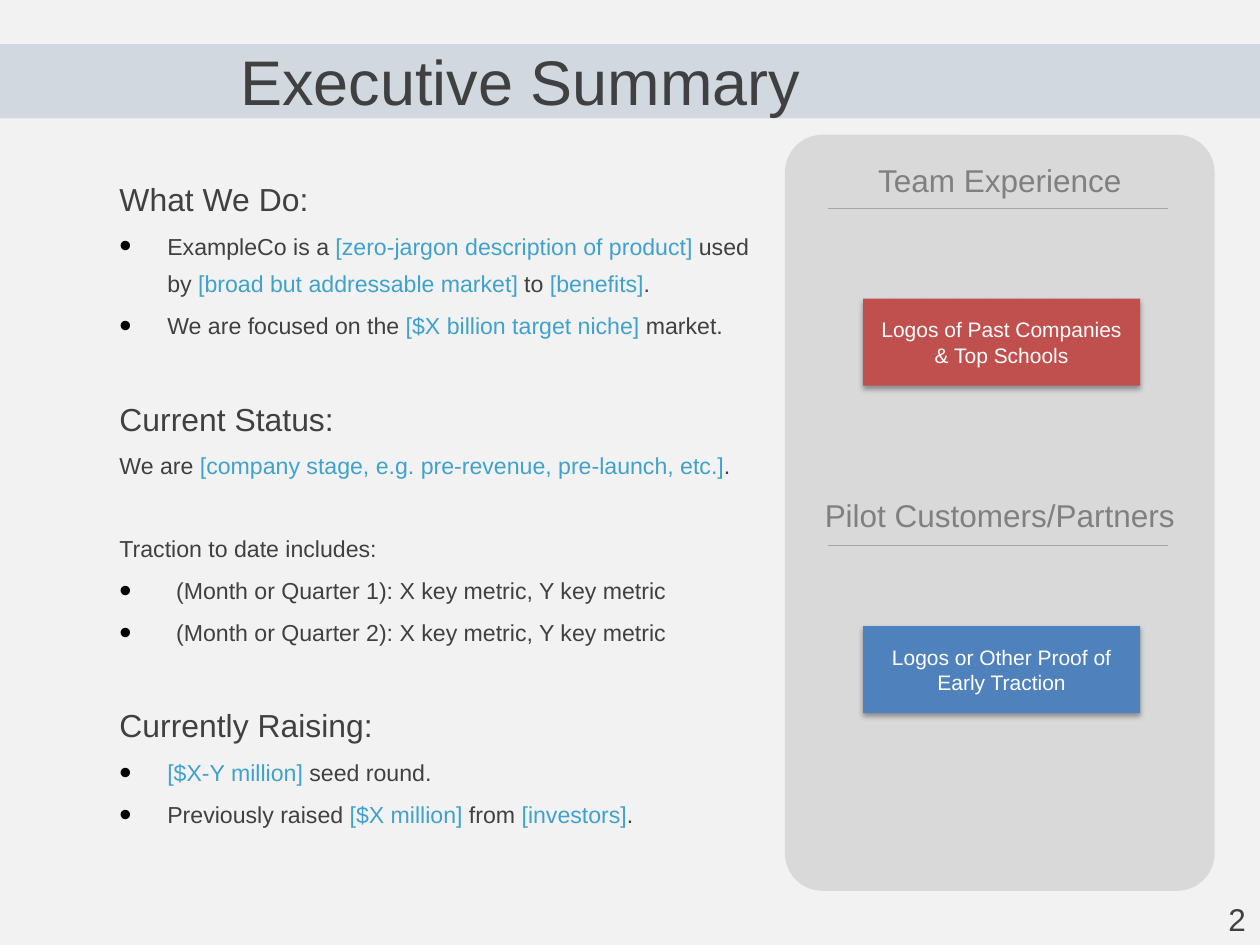
from lxml.etree import SubElement
from pptx import Presentation
from pptx.dml.color import RGBColor
from pptx.enum.shapes import MSO_CONNECTOR, MSO_SHAPE
from pptx.enum.text import MSO_ANCHOR as Anchor, PP_ALIGN as Align
from pptx.oxml.ns import qn
from pptx.util import Inches, Pt

BACKGROUND = RGBColor(0xF2, 0xF2, 0xF2)
NAVY = RGBColor(0x1F, 0x49, 0x7D)
DARK = RGBColor(0x40, 0x40, 0x40)
ACCENT = RGBColor(0x40, 0xA2, 0xCB)
PANEL = RGBColor(0xD9, 0xD9, 0xD9)
LABEL = RGBColor(0x80, 0x80, 0x80)
RULE = RGBColor(0xA6, 0xA6, 0xA6)
RED = RGBColor(0xC0, 0x50, 0x4D)
BLUE = RGBColor(0x4F, 0x81, 0xBD)
WHITE = RGBColor(0xFF, 0xFF, 0xFF)

HEADING, BODY = 18.2, 13.2
SECTION_GAP, PARAGRAPH_GAP = 26.7, 25.8

# text, size, space before, hanging indent; bracketed words are highlighted
SUMMARY = [
    ("What We Do:", HEADING, 0, 0),
    ("ExampleCo is a [zero-jargon description of product] used by "
     "[broad but addressable market] to [benefits].", BODY, 2.64, 0.38),
    ("We are focused on the [$X billion target niche] market.", BODY, 2.64, 0.38),
    ("Current Status:", HEADING, SECTION_GAP, 0),
    ("We are [company stage, e.g. pre-revenue, pre-launch, etc.].", BODY, 2.64, 0),
    ("Traction to date includes:", BODY, PARAGRAPH_GAP, 0),
    ("(Month or Quarter 1): X key metric, Y key metric", BODY, 2.64, 0.45),
    ("(Month or Quarter 2): X key metric, Y key metric", BODY, 2.64, 0.45),
    ("Currently Raising:", HEADING, SECTION_GAP, 0),
    ("[$X-Y million] seed round.", BODY, 2.64, 0.38),
    ("Previously raised [$X million] from [investors].", BODY, 2.64, 0.38),
]

# label, label top, rule height, proof text, proof top, proof colour
PANEL_SECTIONS = [
    ("Team Experience", 1.23, 1.65,
     "Logos of Past Companies & Top Schools", 2.37, RED),
    ("Pilot Customers/Partners", 3.89, 4.33,
     "Logos or Other Proof of Early Traction", 4.97, BLUE),
]


def set_font(para, size, color):
    para.font.name = "Arial"
    para.font.size = Pt(size)
    para.font.color.rgb = color


def add_block(shapes, kind, left, top, width, height, color):
    block = shapes.add_shape(kind, Inches(left), Inches(top), Inches(width), Inches(height))
    block.shadow.inherit = False
    block.fill.solid()
    block.fill.fore_color.rgb = color
    block.line.fill.background()
    return block


def add_text(shapes, left, top, width, height, text, size, color, align=Align.LEFT, wrap=False):
    box = shapes.add_textbox(Inches(left), Inches(top), Inches(width), Inches(height))
    box.text_frame.word_wrap = wrap
    para = box.text_frame.paragraphs[0]
    para.text = text
    para.alignment = align
    set_font(para, size, color)
    return box


def add_bullet(para, indent):
    props = para._p.get_or_add_pPr()
    props.set("marL", str(Inches(indent)))
    props.set("indent", str(-Inches(indent)))
    SubElement(SubElement(props, qn("a:buClr")), qn("a:srgbClr"), val="000000")
    SubElement(props, qn("a:buSzPct"), val="150000")
    SubElement(props, qn("a:buFont"), typeface="Arial")
    SubElement(props, qn("a:buChar"), char="•")


def add_shadow(shape):
    effects = shape._element.spPr.find(qn("a:effectLst"))
    shadow = SubElement(effects, qn("a:outerShdw"), blurRad=str(Pt(3.1)),
                        dist=str(Pt(1.8)), dir="5400000", rotWithShape="0")
    color = SubElement(shadow, qn("a:srgbClr"), val="000000")
    SubElement(color, qn("a:alpha"), val="35000")


def add_rule(shapes, left, right, top):
    rule = shapes.add_connector(MSO_CONNECTOR.STRAIGHT, Inches(left), Inches(top),
                                Inches(right), Inches(top))
    rule.line.color.rgb = RULE
    rule.line.width = Pt(0.25)
    SubElement(rule._element.spPr, qn("a:effectLst"))


def add_title_band(page, top, width, height):
    band = add_block(page.shapes, MSO_SHAPE.RECTANGLE, 0, top, width, height, NAVY)
    color = band._element.spPr.find(qn("a:solidFill"))[0]
    SubElement(color, qn("a:alpha"), val="15000")
    title = add_text(page.shapes, 1.81, top, 6.7, height, "Executive Summary", 36, DARK, wrap=True)
    title.text_frame.margin_top = Inches(0.1)
    title.text_frame.margin_bottom = 0
    title.text_frame.paragraphs[0].line_spacing = 0.8


def add_summary(page, left, top, width, height):
    box = page.shapes.add_textbox(Inches(left), Inches(top), Inches(width), Inches(height))
    frame = box.text_frame
    frame.word_wrap = True
    for index, (text, size, space, indent) in enumerate(SUMMARY):
        para = frame.add_paragraph() if index else frame.paragraphs[0]
        para.line_spacing = 1.35
        para.space_before = Pt(space)
        if indent:
            add_bullet(para, indent)
        set_font(para, size, DARK)
        for part in text.replace("[", "|[").replace("]", "]|").split("|"):
            if part:
                span = para.add_run()
                span.text = part
                if part.startswith("["):
                    span.font.color.rgb = ACCENT


def add_proof(shapes, left, top, width, height, text, color):
    proof = add_block(shapes, MSO_SHAPE.RECTANGLE, left, top, width, height, color)
    add_shadow(proof)
    frame = proof.text_frame
    frame.word_wrap = True
    frame.vertical_anchor = Anchor.MIDDLE
    para = frame.paragraphs[0]
    para.text = text
    para.alignment = Align.CENTER
    set_font(para, 12, WHITE)


def add_side_panel(page, left, top, width, height):
    shapes = page.shapes.add_group_shape().shapes
    panel = add_block(shapes, MSO_SHAPE.ROUNDED_RECTANGLE, left, top, width, height, PANEL)
    panel.adjustments[0] = 0.087
    for label, label_top, rule_top, proof, proof_top, color in PANEL_SECTIONS:
        add_text(shapes, left + 0.2, label_top, width - 0.4, 0.4, label, 18, LABEL, Align.CENTER)
        add_rule(shapes, left + 0.34, left + 3.04, rule_top)
        add_proof(page.shapes, left + 0.62, proof_top, 2.2, 0.69, proof, color)


def main():
    deck = Presentation()
    deck.slide_width, deck.slide_height = Inches(10), Inches(7.5)
    page = deck.slides.add_slide(deck.slide_layouts[6])
    page.background.fill.solid()
    page.background.fill.fore_color.rgb = BACKGROUND
    add_title_band(page, 0.35, 10, 0.59)
    add_summary(page, 0.85, 1.27, 5.2, 6.03)
    add_side_panel(page, 6.23, 1.07, 3.41, 6)
    add_text(page.shapes, 9.65, 7.09, 0.34, 0.4, "2", 18, DARK)
    deck.save("out.pptx")


if __name__ == "__main__":
    main()
